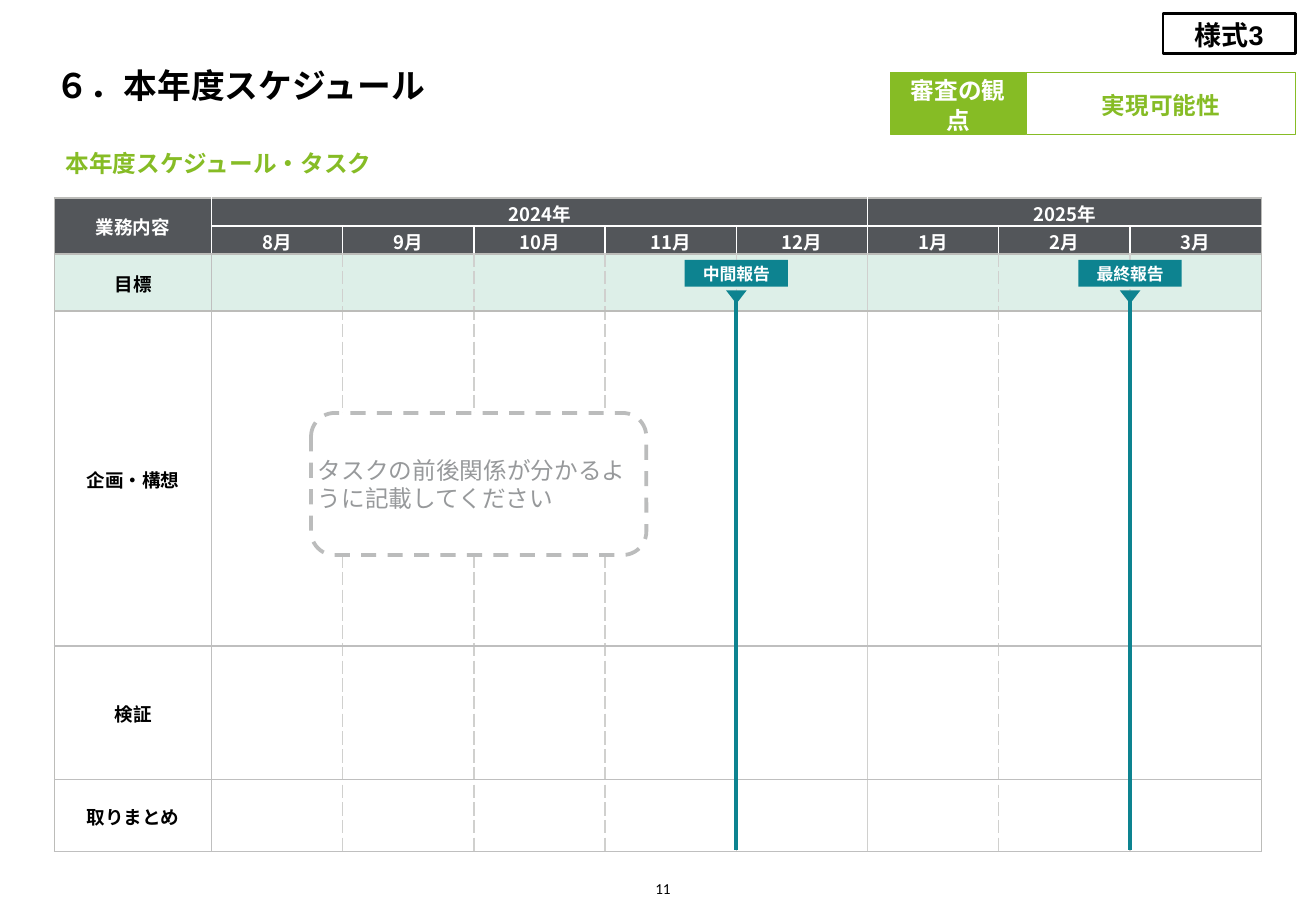
import pptx
import pptx.util
import pptx.dml.color
import pptx.enum.dml
import pptx.enum.shapes
import pptx.enum.text
import pptx.oxml
import pptx.oxml.ns
import lxml.etree

Inches, Pt = pptx.util.Inches, pptx.util.Pt
RGB = pptx.dml.color.RGBColor.from_string
SHAPE = pptx.enum.shapes.MSO_SHAPE
DASH = pptx.enum.dml.MSO_LINE.DASH
LEFT, CENTER, RIGHT = (getattr(pptx.enum.text.PP_ALIGN, a) for a in ("LEFT", "CENTER", "RIGHT"))
TOP, MIDDLE, BOTTOM = (getattr(pptx.enum.text.MSO_ANCHOR, a) for a in ("TOP", "MIDDLE", "BOTTOM"))

YEARS = [("2024年", ["8月", "9月", "10月", "11月", "12月"]),
         ("2025年", ["1月", "2月", "3月"])]
TASK_HEADING = "業務内容"
TASKS = ["目標", "企画・構想", "検証", "取りまとめ"]
REPORTS = [("中間報告", 4), ("最終報告", 7)]


class Theme:
    white, black, grey_text = "FFFFFF", "000000", "97999B"
    green, teal, header, goal = "86BC25", "0D8390", "53565A", "DDEFE8"
    frame, rule, month, note = "BCBCB9", "BFBFBF", "D0D0CE", "BBBCBC"
    body, sans, cjk = "Calibri", "Arial", "Noto Sans CJK JP"
    title, form, heading, cell, marker, page = 20, 16, 14, 11, 10, 9


TABLE_X, TABLE_Y = 0.45, 1.63
TASK_W, MONTH_W = 1.29, 1.08
ROW_H = [0.23, 0.23, 0.47, 2.76, 1.1, 0.59]
HEADER_ROWS = 2
N_MONTHS = sum(len(months) for _, months in YEARS)
N_COLS = N_MONTHS + 1
YEAR_EDGE = len(YEARS[0][1]) + 1


def write(tf, text, size, color, font=Theme.body, bold=True, align=CENTER, spacing=None):
    p = tf.paragraphs[0]
    p.alignment = align
    if spacing:
        p.line_spacing = spacing
    r = p.add_run()
    r.text = text
    r.font.name, r.font.size, r.font.bold = font, Pt(size), bold
    r.font.color.rgb = RGB(color)
    ea = lxml.etree.SubElement(r.font._element, pptx.oxml.ns.qn("a:ea"))
    ea.set("typeface", font)


def frame_text(sp, margins, anchor, wrap):
    tf = sp.text_frame
    tf.margin_left, tf.margin_top, tf.margin_right, tf.margin_bottom = map(Inches, margins)
    tf.vertical_anchor, tf.word_wrap = anchor, wrap
    return tf


def add_text(shapes, box, text, size, color, anchor, align, margin_left=0, wrap=True, bold=True):
    sp = shapes.add_textbox(*map(Inches, box))
    tf = frame_text(sp, (margin_left, 0, 0, 0), anchor, wrap)
    write(tf, text, size, color, bold=bold, align=align)


def add_box(shapes, kind, box, fill, line=None, width=1):
    sp = shapes.add_shape(kind, *map(Inches, box))
    sp.shadow.inherit = False
    sp.fill.solid()
    sp.fill.fore_color.rgb = RGB(fill)
    if line:
        sp.line.color.rgb = RGB(line)
        sp.line.width = Pt(width)
    else:
        sp.line.fill.background()
    return sp


def label_box(shapes, box, text, size, color, fill, line, width):
    sp = add_box(shapes, SHAPE.RECTANGLE, box, fill, line, width)
    write(frame_text(sp, [0.08] * 4, MIDDLE, True), text, size, color, Theme.sans, spacing=1.06)


def vertical_edge(row, edge):
    if edge in (0, N_COLS):
        return Theme.frame, "solid"
    if row < HEADER_ROWS:
        return Theme.white, "solid"
    if edge == 1:
        return Theme.rule, "solid"
    return Theme.month, "solid" if edge == YEAR_EDGE else "sysDash"


def horizontal_edge(edge):
    if edge == 1:
        return Theme.white, "solid"
    return Theme.frame if edge <= HEADER_ROWS + 1 else Theme.rule, "solid"


def set_borders(cell, row, col):
    edges = [("L", vertical_edge(row, col)),
             ("R", vertical_edge(row, col + cell.span_width)),
             ("T", horizontal_edge(row)),
             ("B", horizontal_edge(row + cell.span_height))]
    tc_pr = cell._tc.get_or_add_tcPr()
    for side, (color, dash) in edges:
        tc_pr.append(pptx.oxml.parse_xml(
            f'<a:ln{side} {pptx.oxml.ns.nsdecls("a")} w="12700"><a:solidFill>'
            f'<a:srgbClr val="{color}"/></a:solidFill><a:prstDash val="{dash}"/></a:ln{side}>'))


def add_schedule(shapes):
    table = shapes.add_table(len(ROW_H), N_COLS, Inches(TABLE_X), Inches(TABLE_Y),
                             Inches(TASK_W + N_MONTHS * MONTH_W), Inches(sum(ROW_H))).table
    table.first_row = table.horz_banding = False
    for col in range(N_COLS):
        table.columns[col].width = Inches(MONTH_W if col else TASK_W)
    for row, height in enumerate(ROW_H):
        table.rows[row].height = Inches(height)

    labels = {(0, 0): TASK_HEADING}
    table.cell(0, 0).merge(table.cell(1, 0))
    col = 1
    for year, months in YEARS:
        labels[0, col] = year
        table.cell(0, col).merge(table.cell(0, col + len(months) - 1))
        for month in months:
            labels[1, col] = month
            col += 1
    for row, task in enumerate(TASKS, HEADER_ROWS):
        labels[row, 0] = task

    for row in range(len(ROW_H)):
        header = row < HEADER_ROWS
        fill = Theme.header if header else Theme.goal if row == HEADER_ROWS else Theme.white
        for col in range(N_COLS):
            cell = table.cell(row, col)
            if not cell.is_spanned:
                set_borders(cell, row, col)
            cell.fill.solid()
            cell.fill.fore_color.rgb = RGB(fill)
            cell.margin_left = cell.margin_right = Inches(0.04)
            cell.margin_top = cell.margin_bottom = 0
            cell.vertical_anchor = MIDDLE
            if (row, col) in labels:
                write(cell.text_frame, labels[row, col], Theme.cell,
                      Theme.white if header else Theme.black, Theme.cjk, spacing=1.06)


def add_report(shapes, text, months_done):
    x = TABLE_X + TASK_W + months_done * MONTH_W
    line = shapes.add_connector(pptx.enum.shapes.MSO_CONNECTOR.STRAIGHT,
                                Inches(x), Inches(2.41), Inches(x), Inches(7))
    line.line.color.rgb = RGB(Theme.teal)
    line.line.width = Pt(2.25)
    lxml.etree.SubElement(line._element.spPr, pptx.oxml.ns.qn("a:effectLst"))
    arrow = add_box(shapes, SHAPE.ISOSCELES_TRIANGLE, (x - 0.085, 2.39, 0.17, 0.11), Theme.teal)
    arrow.rotation = 180
    flag = add_box(shapes, SHAPE.RECTANGLE, (x - 0.425, 2.14, 0.85, 0.22), Theme.teal)
    write(frame_text(flag, [0.04] * 4, MIDDLE, False), text, Theme.marker, Theme.white, Theme.cjk)


def main():
    prs = pptx.Presentation()
    prs.slide_width, prs.slide_height = Inches(10.83), Inches(7.5)
    s = prs.slides.add_slide(prs.slide_layouts[6])
    shapes = s.shapes

    add_text(shapes, (5.32, 7.2, 0.2, 0.19), "11", Theme.page, Theme.black,
             BOTTOM, RIGHT, wrap=False, bold=False)
    label_box(shapes, (9.57, 0.11, 1.09, 0.33), "様式3", Theme.form,
              Theme.black, Theme.white, Theme.black, 1.5)
    add_schedule(shapes)
    for text, months_done in REPORTS:
        add_report(shapes, text, months_done)
    add_text(shapes, (0.46, 0.2, 9.92, 0.67), "６．本年度スケジュール", Theme.title,
             Theme.black, BOTTOM, LEFT)
    add_text(shapes, (0.46, 1.11, 4.76, 0.47), "本年度スケジュール・タスク", Theme.heading,
             Theme.green, MIDDLE, LEFT, margin_left=0.08, wrap=False)

    criteria = shapes.add_group_shape().shapes
    label_box(criteria, (8.45, 0.6, 2.21, 0.51), "実現可能性", Theme.heading,
              Theme.green, Theme.white, Theme.green, 0.5)
    label_box(criteria, (7.33, 0.6, 1.11, 0.51), "審査の観点", Theme.heading,
              Theme.white, Theme.green, Theme.green, 0.5)

    note = add_box(shapes, SHAPE.ROUNDED_RECTANGLE, (2.56, 3.4, 2.76, 1.17),
                   Theme.white, Theme.note, 2.25)
    note.line.dash_style = DASH
    write(frame_text(note, [0] * 4, MIDDLE, True), "タスクの前後関係が分かるように記載してください",
          Theme.heading, Theme.grey_text, bold=False, align=LEFT)

    prs.save("out.pptx")


if __name__ == "__main__":
    main()
